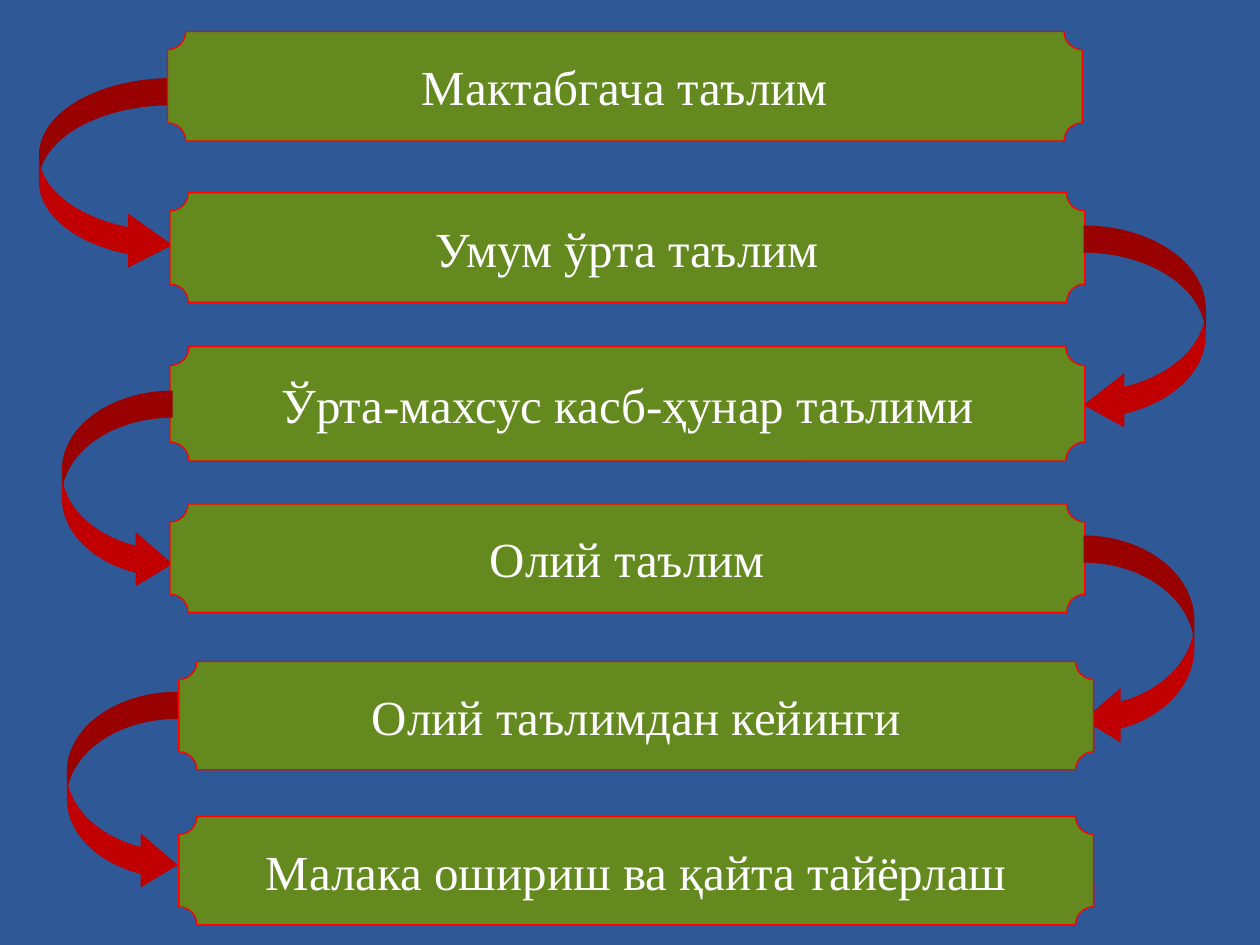
"""Build a slide that shows the stages of education as a descending chain."""
import pptx
import pptx.dml.color
import pptx.enum.shapes
import pptx.enum.text
import pptx.util

BLUE = pptx.dml.color.RGBColor(0x2F, 0x58, 0x97)
GREEN = pptx.dml.color.RGBColor(0x63, 0x89, 0x1F)
RED = pptx.dml.color.RGBColor(0xFF, 0x00, 0x00)
DARK_RED = pptx.dml.color.RGBColor(0xC0, 0x00, 0x00)
WHITE = pptx.dml.color.RGBColor(0xFF, 0xFF, 0xFF)

SHAPE = pptx.enum.shapes.MSO_SHAPE
CELL = pptx.util.Inches(0.1)
COLUMNS, ROWS = 100, 75
STAGE_WIDTH = 72.6

FIRST_STAGE = ("Мактабгача таълим", (13.3, 2.5, STAGE_WIDTH, 8.7))
LATER_STAGES = [
    ("Умум ўрта таълим", (13.5, 15.3, STAGE_WIDTH, 8.7)),
    ("Ўрта-махсус касб-ҳунар таълими", (13.5, 27.5, STAGE_WIDTH, 9.1)),
    ("Олий таълим", (13.5, 40, STAGE_WIDTH, 8.6)),
    ("Олий таълимдан кейинги", (14.2, 52.5, STAGE_WIDTH, 8.6)),
    ("Малака ошириш ва қайта тайёрлаш", (14.2, 64.8, STAGE_WIDTH, 8.6)),
]
TRANSITIONS = [
    (SHAPE.CURVED_RIGHT_ARROW, (3.1, 6.2, 10.6, 15.4)),
    (SHAPE.CURVED_LEFT_ARROW, (86, 17.9, 9.7, 16.4)),
    (SHAPE.CURVED_RIGHT_ARROW, (4.9, 31, 8.8, 15.9)),
    (SHAPE.CURVED_LEFT_ARROW, (86, 42.5, 8.8, 16.8)),
    (SHAPE.CURVED_RIGHT_ARROW, (5.3, 54.9, 8.8, 15.9)),
]
BAND = 2.15


def add_block(slide, preset, box, color):
    """Add a plain filled preset shape in a box of grid cells."""
    block = slide.shapes.add_shape(preset, *(round(cells * CELL) for cells in box))
    block.shadow.inherit = False
    block.fill.solid()
    block.fill.fore_color.rgb = color
    return block


def add_transition(slide, preset, box):
    """Add a curved arrow from one stage to the next."""
    transition = add_block(slide, preset, box, DARK_RED)
    transition.line.fill.background()
    share = BAND / box[2]
    for index, value in enumerate((share, 2 * share, 1 / 3)):
        transition.adjustments[index] = value


def add_stage(slide, title, box):
    """Add a plaque with the centred title of a stage."""
    stage = add_block(slide, SHAPE.PLAQUE, box, GREEN)
    stage.line.color.rgb = RED
    stage.line.width = pptx.util.Pt(0.75)
    frame = stage.text_frame
    frame.word_wrap = True
    frame.vertical_anchor = pptx.enum.text.MSO_ANCHOR.MIDDLE
    frame.margin_left = frame.margin_right = pptx.util.Inches(0.08)
    frame.margin_top = frame.margin_bottom = pptx.util.Inches(0.04)
    paragraph = frame.paragraphs[0]
    paragraph.alignment = pptx.enum.text.PP_ALIGN.CENTER
    run = paragraph.add_run()
    run.text = title
    run.font.name = "Times New Roman"
    run.font.size = pptx.util.Pt(28)
    run.font.color.rgb = WHITE


def main():
    """Build and save the slide."""
    deck = pptx.Presentation()
    deck.slide_width, deck.slide_height = COLUMNS * CELL, ROWS * CELL
    slide = deck.slides.add_slide(deck.slide_layouts[6])
    slide.background.fill.solid()
    slide.background.fill.fore_color.rgb = BLUE
    for transition, stage in zip(TRANSITIONS, LATER_STAGES):
        add_transition(slide, *transition)
        add_stage(slide, *stage)
    add_stage(slide, *FIRST_STAGE)
    deck.save("out.pptx")


if __name__ == "__main__":
    main()
